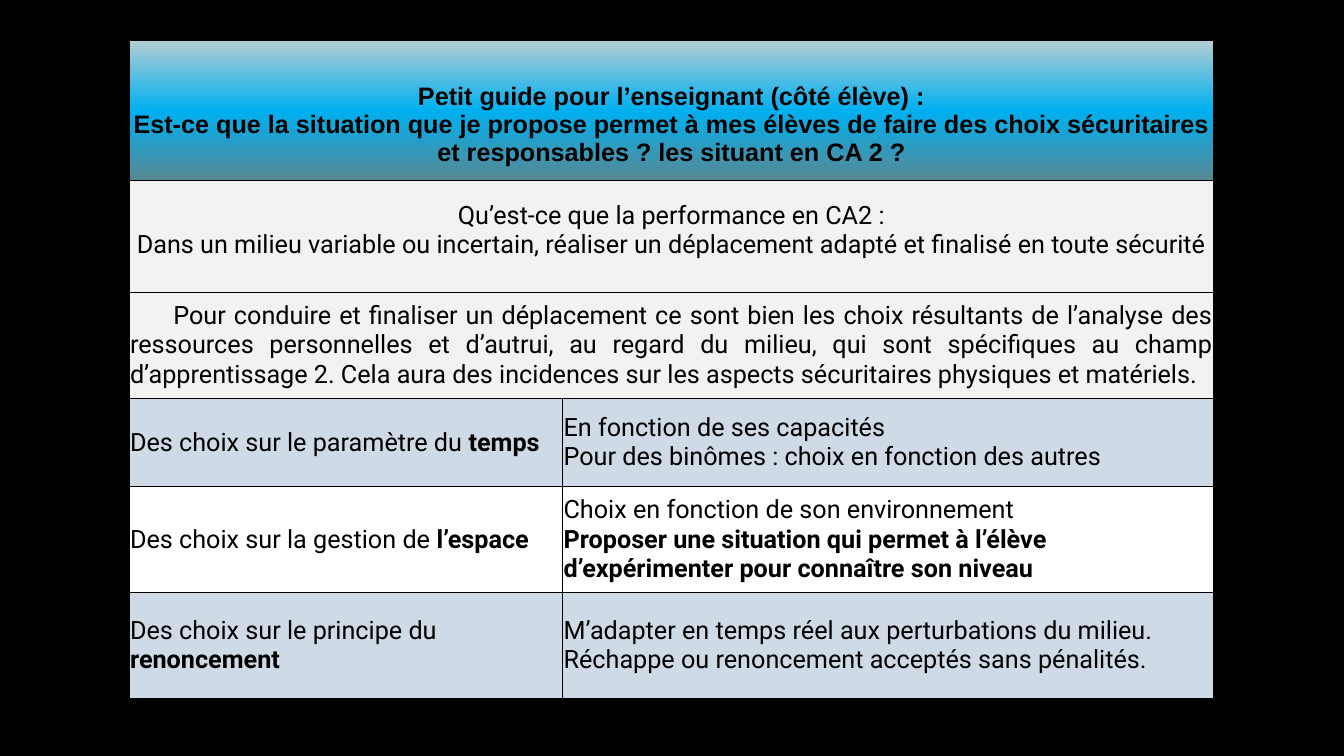
from lxml import etree
from pptx import Presentation
from pptx.dml.color import RGBColor
from pptx.enum.text import MSO_ANCHOR, PP_ALIGN
from pptx.oxml import parse_xml
from pptx.oxml.ns import nsdecls, qn
from pptx.util import Inches, Pt

LEFT, CENTER, JUSTIFY = PP_ALIGN.LEFT, PP_ALIGN.CENTER, PP_ALIGN.JUSTIFY
MIDDLE = MSO_ANCHOR.MIDDLE
BLACK = RGBColor(0x00, 0x00, 0x00)
WHITE = RGBColor(0xFF, 0xFF, 0xFF)
GREY = RGBColor(0xF2, 0xF2, 0xF2)
BLUE = RGBColor(0xCE, 0xDB, 0xE6)
BANNER_STOPS = [
    (0, RGBColor(0xB5, 0xCD, 0xD3)),
    (50, RGBColor(0x00, 0xB0, 0xF0)),
    (100, RGBColor(0x58, 0x88, 0x94)),
]
INSET = 0.01
COLUMN_WIDTHS = [4.3, 6.46]
ROW_HEIGHTS = [1.39, 1.11, 1.05, 0.88, 1.05, 1.05]

# A paragraph is a list of (text, bold) runs.
GUIDE_TITLE = [
    [("Petit guide pour l’enseignant (côté élève) :", True)],
    [("Est-ce que la situation que je propose permet à mes élèves de faire "
      "des choix sécuritaires et responsables ? les situant en CA 2 ?", True)],
]
PERFORMANCE = [
    [("Qu’est-ce que la performance en CA2 :", False)],
    [("Dans un milieu variable ou incertain, réaliser un déplacement adapté "
      "et finalisé en toute sécurité", False)],
]
EXPLANATION = [
    [("Pour conduire et finaliser un déplacement ce sont bien les choix "
      "résultants de l’analyse des ressources personnelles et d’autrui, au "
      "regard du milieu, qui sont spécifiques au champ d’apprentissage 2. "
      "Cela aura des incidences sur les aspects sécuritaires physiques et "
      "matériels.", False)],
]
CHOICES = [
    ("Des choix sur le paramètre du ", "temps", BLUE, [
        [("En fonction de ses capacités", False)],
        [("Pour des binômes : choix en fonction des autres", False)],
    ]),
    ("Des choix sur la gestion de ", "l’espace", WHITE, [
        [("Choix en fonction de son environnement", False)],
        [("Proposer une situation qui permet à l’élève d’expérimenter pour "
          "connaître son niveau", True)],
    ]),
    ("Des choix sur le principe du ", "renoncement", BLUE, [
        [("M’adapter en temps réel aux perturbations du milieu.", False)],
        [("Réchappe ou renoncement acceptés sans pénalités.", False)],
    ]),
]


class GuideSlide:
    def __init__(self, presentation):
        self.slide = presentation.slides.add_slide(presentation.slide_layouts[6])
        self.font = "Roboto"
        self.size = Pt(18)
        background = self.slide.background.fill
        background.solid()
        background.fore_color.rgb = BLACK

    def table(self, left, top, widths, heights):
        table = self.slide.shapes.add_table(
            len(heights), len(widths), Inches(left), Inches(top),
            Inches(sum(widths)), Inches(sum(heights))).table
        table.first_row = table.horz_banding = False
        for column, width in zip(table.columns, widths):
            column.width = Inches(width)
        for row, height in zip(table.rows, heights):
            row.height = Inches(height)
        for cell in table.iter_cells():
            self.borders(cell)
        return table

    def borders(self, cell):
        properties = cell._tc.get_or_add_tcPr()
        for side in ("lnL", "lnR", "lnT", "lnB"):
            line = etree.SubElement(properties, qn(f"a:{side}"), w=str(Pt(0.75)))
            fill = etree.SubElement(line, qn("a:solidFill"))
            etree.SubElement(fill, qn("a:srgbClr"), val=str(BLACK))

    def fill(self, cell, color):
        cell.fill.solid()
        cell.fill.fore_color.rgb = color

    def gradient(self, cell, stops):
        """Fill the cell from top to bottom with (percent, colour) stops."""
        marks = "".join(
            f'<a:gs pos="{percent * 1000}"><a:srgbClr val="{color}"/></a:gs>'
            for percent, color in stops)
        cell._tc.get_or_add_tcPr().append(parse_xml(
            f'<a:gradFill {nsdecls("a")} rotWithShape="1"><a:gsLst>{marks}'
            '</a:gsLst><a:lin ang="5400000" scaled="0"/></a:gradFill>'))

    def text(self, cell, paragraphs, align=LEFT, font=None, above=INSET,
             below=INSET, indent=0):
        cell.vertical_anchor = MIDDLE
        cell.margin_left = cell.margin_right = Inches(INSET)
        cell.margin_top, cell.margin_bottom = Inches(above), Inches(below)
        frame = cell.text_frame
        for number, runs in enumerate(paragraphs):
            paragraph = frame.add_paragraph() if number else frame.paragraphs[0]
            paragraph.alignment = align
            if indent:
                paragraph._p.get_or_add_pPr().set("indent", str(Inches(indent)))
            for content, bold in runs:
                run = paragraph.add_run()
                run.text = content
                run.font.name = font or self.font
                run.font.size = self.size
                run.font.bold = bold
                run.font.color.rgb = BLACK


def main():
    presentation = Presentation()
    presentation.slide_width = Inches(13.33)
    presentation.slide_height = Inches(7.5)
    page = GuideSlide(presentation)
    guide = page.table(1.28, 0.4, COLUMN_WIDTHS, ROW_HEIGHTS)

    banner, performance, explanation = (guide.cell(row, 0) for row in range(3))
    for row, wide_cell in enumerate((banner, performance, explanation)):
        wide_cell.merge(guide.cell(row, 1))
    page.gradient(banner, BANNER_STOPS)
    page.text(banner, GUIDE_TITLE, CENTER, font="Arial", above=0.29)
    page.fill(performance, GREY)
    page.text(performance, PERFORMANCE, CENTER, below=0.13)
    page.fill(explanation, GREY)
    page.text(explanation, EXPLANATION, JUSTIFY, indent=0.43)

    for row, (lead, keyword, color, answers) in enumerate(CHOICES, start=3):
        choice, answer = guide.cell(row, 0), guide.cell(row, 1)
        page.fill(choice, color)
        page.text(choice, [[(lead, False), (keyword, True)]])
        page.fill(answer, color)
        page.text(answer, answers)

    presentation.save("out.pptx")


if __name__ == "__main__":
    main()
